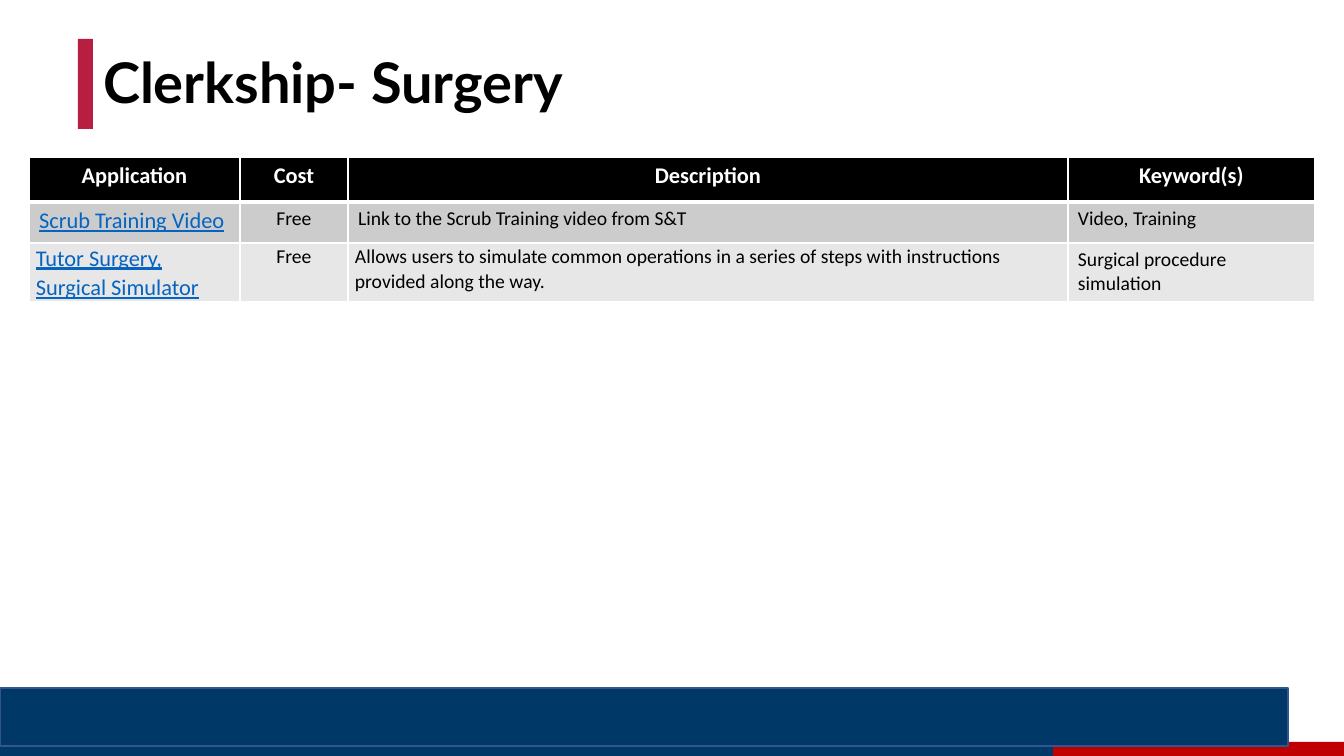
from dataclasses import dataclass

from lxml.etree import SubElement
from pptx import Presentation
from pptx.dml.color import RGBColor
from pptx.enum.shapes import MSO_SHAPE
from pptx.enum.text import MSO_ANCHOR, MSO_AUTO_SIZE, PP_ALIGN
from pptx.oxml.ns import qn
from pptx.util import Emu, Pt

SCALE = 914400 / 100.8
WHITE, BLACK, NAVY, LINK = "FFFFFF", "000000", "003968", "0563C1"
LEFT, MID = PP_ALIGN.LEFT, PP_ALIGN.CENTER
COLS = (211, 108, 720, 247)
ROWS = (45, 41, 41)


@dataclass
class Bar:
    left: int
    top: int
    width: int
    height: int
    fill: str
    line: str = ""


@dataclass
class Cell:
    text: str
    size: int = 14
    color: str = BLACK
    bold: bool = False
    under: bool = False
    align: PP_ALIGN = LEFT
    tight: bool = False


@dataclass
class Row:
    fill: str
    top: int
    base: int
    cells: list[Cell]


def px(num: int) -> Emu:
    return Emu(round(num * SCALE))


def tint(code: str) -> RGBColor:
    return RGBColor.from_string(code)


def write(frame, text: str, *, size: int, color: str = BLACK, font: str = "Calibri",
          bold: bool = False, under: bool = False, align: PP_ALIGN = LEFT,
          space: float = 1.0) -> None:
    para = frame.paragraphs[0]
    para.alignment = align
    para.line_spacing = space
    run = para.add_run()
    run.text = text
    face = run.font
    face.name, face.size, face.bold, face.underline = font, Pt(size), bold, under
    face.color.rgb = tint(color)


def draw_bar(slide, bar: Bar) -> None:
    shape = slide.shapes.add_shape(MSO_SHAPE.RECTANGLE, px(bar.left), px(bar.top),
                                   px(bar.width), px(bar.height))
    shape.shadow.inherit = False
    shape.fill.solid()
    shape.fill.fore_color.rgb = tint(bar.fill)
    if bar.line:
        shape.line.color.rgb = tint(bar.line)
        shape.line.width = Pt(1)
    else:
        shape.line.fill.background()


def edge(box, top: int, base: int) -> None:
    props = box._tc.get_or_add_tcPr()
    for side, width in (("lnL", 1), ("lnR", 1), ("lnT", top), ("lnB", base)):
        line = SubElement(props, qn(f"a:{side}"), w=str(Pt(width)))
        fill = SubElement(line, qn("a:solidFill"))
        SubElement(fill, qn("a:srgbClr"), val=WHITE)


def draw_cell(box, cell: Cell, row: Row) -> None:
    edge(box, row.top, row.base)
    box.fill.solid()
    box.fill.fore_color.rgb = tint(row.fill)
    if cell.tight:
        box.margin_left = box.margin_right = px(7)
        box.margin_top = box.margin_bottom = 0
    write(box.text_frame, cell.text, size=cell.size, color=cell.color, bold=cell.bold,
          under=cell.under, align=cell.align, space=1.07 if cell.tight else 1.0)


def draw_table(slide, rows: list[Row]) -> None:
    table = slide.shapes.add_table(len(rows), len(COLS), px(29), px(157),
                                   px(sum(COLS)), px(sum(ROWS))).table
    table.horz_banding = False
    for col, width in zip(table.columns, COLS):
        col.width = px(width)
    for line, height, row in zip(table.rows, ROWS, rows):
        line.height = px(height)
        for box, cell in zip(line.cells, row.cells):
            draw_cell(box, cell, row)


BARS = [
    Bar(291, 742, 1053, 17, "C00000"),
    Bar(0, 742, 1053, 17, NAVY),
    Bar(0, 688, 1288, 58, NAVY, "325491"),
    Bar(78, 39, 15, 90, "B71E42"),
]
HEADS = ("Application", "Cost", "Description", "Keyword(s)")
TABLE = [
    Row(BLACK, 1, 3, [Cell(head, 16, WHITE, bold=True, align=MID) for head in HEADS]),
    Row("CCCCCC", 3, 1, [
        Cell("Scrub Training Video", 16, LINK, under=True),
        Cell("Free", align=MID),
        Cell("Link to the Scrub Training video from S&T"),
        Cell("Video, Training"),
    ]),
    Row("E7E7E7", 1, 1, [
        Cell("Tutor Surgery, Surgical Simulator", 16, LINK, under=True, tight=True),
        Cell("Free", align=MID, tight=True),
        Cell("Allows users to simulate common operations in a series of steps "
             "with instructions provided along the way.", tight=True),
        Cell("Surgical procedure simulation"),
    ]),
]


def main() -> None:
    deck = Presentation()
    deck.slide_width, deck.slide_height = px(1344), px(756)
    slide = deck.slides.add_slide(deck.slide_layouts[5])

    # Footer bands and title accent
    for bar in BARS:
        draw_bar(slide, bar)

    # Title
    title = slide.shapes.title
    title.left, title.top, title.width, title.height = px(93), px(40), px(1159), px(90)
    frame = title.text_frame
    frame.auto_size = MSO_AUTO_SIZE.NONE
    frame.vertical_anchor = MSO_ANCHOR.MIDDLE
    write(frame, "Clerkship- Surgery", size=40, font="Lato", bold=True, space=0.9)

    # Application table
    draw_table(slide, TABLE)
    deck.save("out.pptx")


if __name__ == "__main__":
    main()
